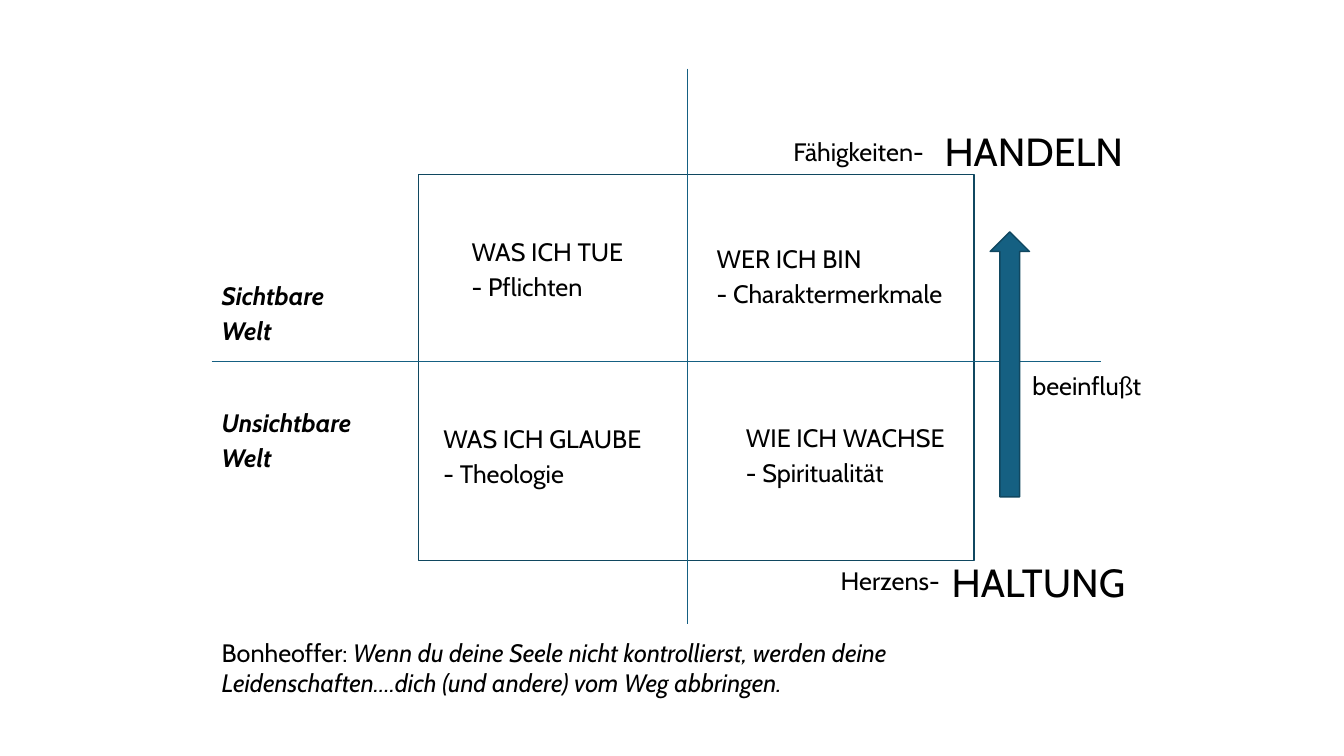
import pptx
import pptx.util
import pptx.dml.color
import pptx.enum.shapes
import pptx.oxml
from pptx.util import Inches, Pt

INK, EDGE, TEAL, WHITE = "000000", "104760", "156082", "FFFFFF"
PLAIN = {"name": "Cabin", "size": Pt(18), "bold": False, "italic": False}
SLANT = {**PLAIN, "italic": True}
STRONG = {**SLANT, "bold": True}
LARGE = {**PLAIN, "size": Pt(28)}

FRAME = (4.15, 1.73, 5.51, 3.83)
ARROW = (9.82, 2.3, 0.39, 2.63)
AXES = [(6.82, 0.68, 6.82, 6.19), (2.1, 3.59, 10.92, 3.59)]
LABELS = [
    ((7.01, 2.36, 3.07, 0.71), PLAIN, ["WER ICH BIN", "- Charaktermerkmale"]),
    ((4.58, 2.29, 1.89, 1.01), PLAIN, ["WAS ICH TUE", "- Pflichten"]),
    ((4.3, 4.15, 2.36, 0.71), PLAIN, ["WAS ICH GLAUBE", "- Theologie"]),
    ((7.3, 4.14, 2.44, 0.71), PLAIN, ["WIE ICH WACHSE", "- Spiritualität"]),
    ((2.1, 2.73, 1.89, 0.71), STRONG, ["Sichtbare", "Welt"]),
    ((2.1, 3.99, 1.81, 0.71), STRONG, ["Unsichtbare", "Welt"]),
    ((9.27, 1.21, 2.36, 0.57), LARGE, ["HANDELN"]),
    ((9.34, 5.49, 1.98, 0.57), LARGE, ["HALTUNG"]),
    ((10.14, 3.62, 1.41, 0.4), PLAIN, ["beeinflußt"]),
    ((8.24, 5.56, 1.26, 0.4), PLAIN, ["Herzens-"]),
    ((7.77, 1.3, 2.68, 0.4), PLAIN, ["Fähigkeiten-"]),
]
QUOTE = ((2.1, 6.27, 8.98, 0.71), "Bonheoffer: ", [
    "Wenn du deine Seele nicht kontrollierst, werden deine",
    "Leidenschaften….dich (und andere) vom Weg abbringen.",
])


def color(form, code):
    form.rgb = pptx.dml.color.RGBColor.from_string(code)


def place(box):
    return [Inches(n) for n in box]


def stroke(line, code, width):
    color(line.color, code)
    line.width = Pt(width)


def draw(slide, kind, box, fill):
    shape = slide.shapes.add_shape(kind, *place(box))
    shape.shadow.inherit = False
    shape.fill.solid()
    color(shape.fill.fore_color, fill)
    stroke(shape.line, EDGE, 1)


def axis(slide, ends):
    kind = pptx.enum.shapes.MSO_CONNECTOR.STRAIGHT
    line = slide.shapes.add_connector(kind, *place(ends))
    stroke(line.line, TEAL, 0.5)
    props = line._element.spPr
    props.append(pptx.oxml.parse_xml(
        '<a:effectLst xmlns:a="http://schemas.openxmlformats.org/drawingml/2006/main"/>'))


def frame(slide, box):
    text = slide.shapes.add_textbox(*place(box)).text_frame
    text.word_wrap = True
    return text


def write(para, words, style):
    run = para.add_run()
    run.text = words
    for key, value in style.items():
        setattr(run.font, key, value)
    color(run.font.color, INK)


def label(slide, box, style, lines):
    text = frame(slide, box)
    for i, words in enumerate(lines):
        para = text.add_paragraph() if i else text.paragraphs[0]
        if i:
            para.space_before = Pt(style["size"].pt * 0.2)
        write(para, words, style)


def quote(slide, box, name, lines):
    para = frame(slide, box).paragraphs[0]
    write(para, name, PLAIN)
    for i, words in enumerate(lines):
        if i:
            para.add_line_break()
        write(para, words, SLANT)


def main():
    deck = pptx.Presentation()
    deck.slide_width, deck.slide_height = Inches(13.33), Inches(7.5)
    slide = deck.slides.add_slide(deck.slide_layouts[6])
    kinds = pptx.enum.shapes.MSO_SHAPE
    draw(slide, kinds.RECTANGLE, FRAME, WHITE)
    for ends in AXES:
        axis(slide, ends)
    for item in LABELS:
        label(slide, *item)
    quote(slide, *QUOTE)
    draw(slide, kinds.UP_ARROW, ARROW, TEAL)
    deck.save("out.pptx")


if __name__ == "__main__":
    main()
